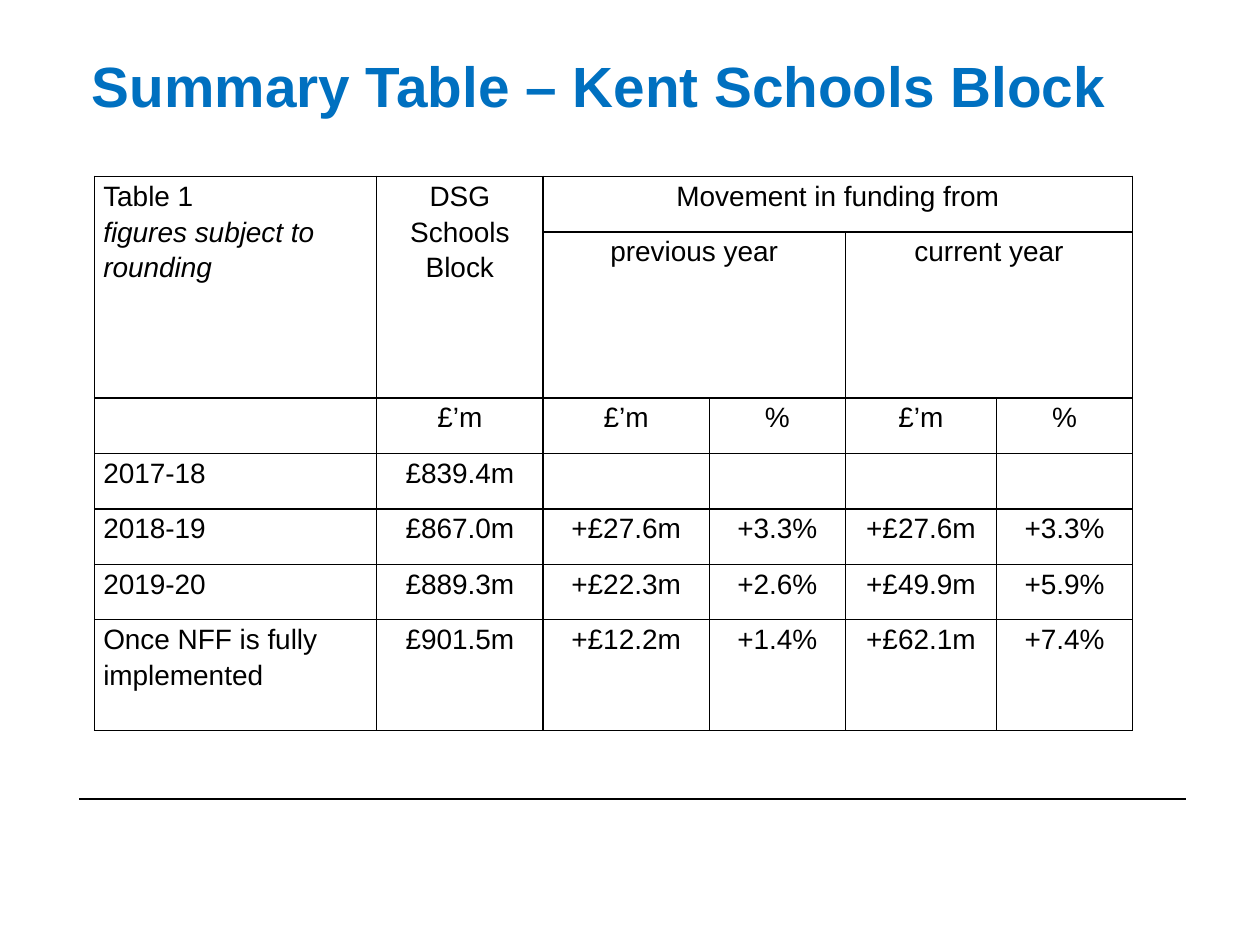
from dataclasses import dataclass
from lxml import etree
from pptx import Presentation
from pptx.dml.color import RGBColor
from pptx.enum.shapes import MSO_CONNECTOR
from pptx.enum.text import MSO_ANCHOR, PP_ALIGN
from pptx.oxml.ns import qn
from pptx.util import Inches, Pt

LEFT, CENTER = PP_ALIGN.LEFT, PP_ALIGN.CENTER
MIDDLE, TOP = MSO_ANCHOR.MIDDLE, MSO_ANCHOR.TOP
STRAIGHT = MSO_CONNECTOR.STRAIGHT


@dataclass(frozen=True)
class Theme:
    font: str = "Arial"
    title_color: str = "0070C0"
    ink: str = "000000"
    title_size: float = 32.4
    body_size: float = 16
    line_width: float = 1
    line_spacing: float = 1.15


@dataclass(frozen=True)
class Entry:
    row: int
    col: int
    text: str
    row_span: int = 1
    col_span: int = 1
    note: str = ""


THEME = Theme()
MARGIN = 0.63
ROW_UNIT = 0.44
ROW_UNITS = [1, 3, 1, 1, 1, 1, 2]
COL_WIDTHS = [2.24, 1.32, 1.32, 1.08, 1.2, 1.08]

HEADERS = [
    Entry(0, 0, "Table 1", row_span=2, note="figures subject to rounding"),
    Entry(0, 1, "DSG Schools Block", row_span=2),
    Entry(0, 2, "Movement in funding from", col_span=4),
    Entry(1, 2, "previous year", col_span=2),
    Entry(1, 4, "current year", col_span=2),
]
BODY = [
    ["", "£’m", "£’m", "%", "£’m", "%"],
    ["2017-18", "£839.4m", "", "", "", ""],
    ["2018-19", "£867.0m", "+£27.6m", "+3.3%", "+£27.6m", "+3.3%"],
    ["2019-20", "£889.3m", "+£22.3m", "+2.6%", "+£49.9m", "+5.9%"],
    ["Once NFF is fully implemented", "£901.5m", "+£12.2m", "+1.4%", "+£62.1m", "+7.4%"],
]


def write(p, text: str, *, size: float = THEME.body_size, color: str = THEME.ink,
          bold: bool = False, italic: bool = False, align=LEFT,
          spacing: float = 1.0) -> None:
    p.alignment, p.line_spacing = align, spacing
    r = p.add_run()
    r.text = text
    f = r.font
    f.name, f.size, f.bold, f.italic = THEME.font, Pt(size), bold, italic
    f.color.rgb = RGBColor.from_string(color)


def style_cell(cell) -> None:
    """Clear the fill, set the margins and draw all four borders."""
    cell.margin_left = cell.margin_right = Inches(0.07)
    cell.margin_top = cell.margin_bottom = 0
    cell.vertical_anchor = TOP
    tc_pr = cell._tc.get_or_add_tcPr()
    for side in ("a:lnL", "a:lnR", "a:lnT", "a:lnB"):
        ln = etree.SubElement(tc_pr, qn(side), w=str(Pt(THEME.line_width)))
        fill = etree.SubElement(ln, qn("a:solidFill"))
        etree.SubElement(fill, qn("a:srgbClr"), val=THEME.ink)
    cell.fill.background()


def add_entry(table, entry: Entry) -> None:
    cell = table.cell(entry.row, entry.col)
    if entry.row_span > 1 or entry.col_span > 1:
        cell.merge(table.cell(entry.row + entry.row_span - 1,
                              entry.col + entry.col_span - 1))
    if not entry.text:
        return
    align = CENTER if entry.col else LEFT
    tf = cell.text_frame
    write(tf.paragraphs[0], entry.text, align=align, spacing=THEME.line_spacing)
    if entry.note:
        write(tf.add_paragraph(), entry.note, italic=True, align=align,
              spacing=THEME.line_spacing)


def add_title(s, text: str) -> None:
    sp = s.shapes.title
    sp.left, sp.top, sp.width, sp.height = map(Inches, (MARGIN, 0.05, 9, 1.25))
    tf = sp.text_frame
    tf.word_wrap, tf.vertical_anchor = True, MIDDLE
    write(tf.paragraphs[0], text, size=THEME.title_size,
          color=THEME.title_color, bold=True)


def add_funding_table(s) -> None:
    frame = s.shapes.add_table(
        len(ROW_UNITS), len(COL_WIDTHS), Inches(0.75), Inches(1.4),
        Inches(sum(COL_WIDTHS)), Inches(ROW_UNIT * sum(ROW_UNITS)))
    table = frame.table
    table.first_row = table.horz_banding = False
    for column, width in zip(table.columns, COL_WIDTHS):
        column.width = Inches(width)
    for row, units in zip(table.rows, ROW_UNITS):
        row.height = Inches(ROW_UNIT * units)
    for cell in table.iter_cells():
        style_cell(cell)
    body = [Entry(r, c, text) for r, row in enumerate(BODY, start=2)
            for c, text in enumerate(row)]
    for entry in HEADERS + body:
        add_entry(table, entry)


def add_rule(s, left: float, right: float, y: float) -> None:
    line = s.shapes.add_connector(STRAIGHT, *map(Inches, (left, y, right, y)))
    line.line.width = Pt(THEME.line_width)
    line.line.color.rgb = RGBColor.from_string(THEME.ink)
    etree.SubElement(line._element.spPr, qn("a:effectLst"))


def main() -> None:
    prs = Presentation()
    prs.slide_width, prs.slide_height = Inches(10), Inches(7.5)
    s = prs.slides.add_slide(prs.slide_layouts[5])

    # Title, footer rule and table
    add_title(s, "Summary Table – Kent Schools Block")
    add_rule(s, MARGIN, 9.41, 6.34)
    add_funding_table(s)

    prs.save("out.pptx")


if __name__ == "__main__":
    main()
